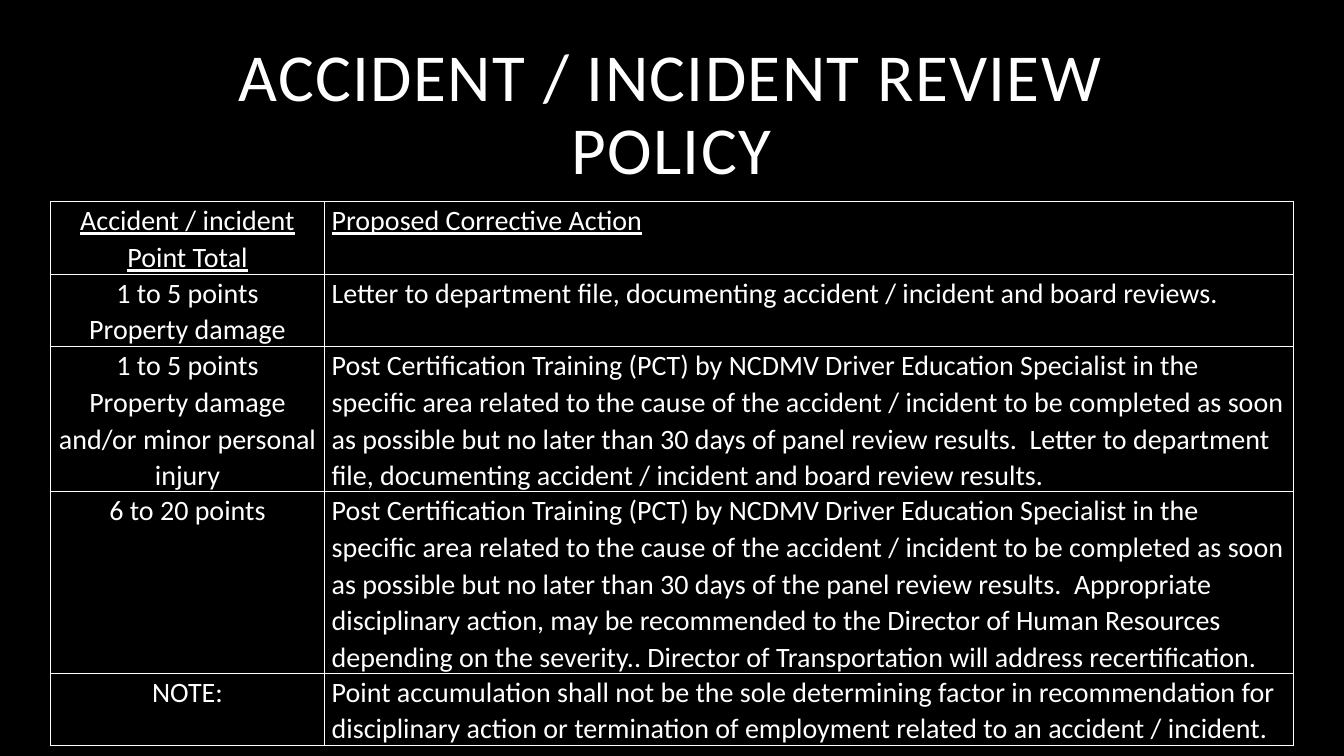
from lxml import etree
from pptx import Presentation
from pptx.dml.color import RGBColor
from pptx.enum.text import MSO_ANCHOR, PP_ALIGN
from pptx.oxml.ns import qn
from pptx.util import Inches, Pt

TITLE = "ACCIDENT / INCIDENT REVIEW POLICY"
TRAINING = (
    "Post Certification Training (PCT) by NCDMV Driver Education Specialist in the "
    "specific area related to the cause of the accident / incident to be completed "
    "as soon as possible but no later than 30 days of "
)
# Point total, corrective action, lines of text in the row
POLICY_ROWS = [
    ("Accident / incident Point Total", "Proposed Corrective Action", 2),
    ("1 to 5 points\nProperty damage",
     "Letter to department file, documenting accident / incident and board reviews.", 2),
    ("1 to 5 points\nProperty damage and/or minor personal injury",
     TRAINING + "panel review results.  Letter to department file, documenting "
     "accident / incident and board review results.", 4),
    ("6 to 20 points",
     TRAINING + "the panel review results.  Appropriate disciplinary action, may be "
     "recommended to the Director of Human Resources depending on the severity.. "
     "Director of Transportation will address recertification.", 5),
    ("NOTE:",
     "Point accumulation shall not be the sole determining factor in recommendation "
     "for disciplinary action or termination of employment related to an "
     "accident / incident.", 2),
]
COLUMN_WIDTHS = (2.72, 9.61)
COLUMN_ALIGNS = (PP_ALIGN.CENTER, PP_ALIGN.LEFT)
LINE_HEIGHT = 0.36
FONT = "Calibri"
BLACK = RGBColor(0x00, 0x00, 0x00)
WHITE = RGBColor(0xFF, 0xFF, 0xFF)


def style_text(frame, size, align, spacing, underline=False):
    for para in frame.paragraphs:
        para.alignment = align
        para.line_spacing = spacing
        for span in para.runs:
            font = span.font
            font.name, font.size, font.underline = FONT, Pt(size), underline
            font.color.rgb = WHITE


def add_borders(cell):
    """Draw a 1 pt white line on each side, ahead of the cell's fill."""
    properties = cell._tc.get_or_add_tcPr()
    for index, side in enumerate(("a:lnL", "a:lnR", "a:lnT", "a:lnB")):
        line = etree.Element(qn(side), w=str(Pt(1)))
        fill = etree.SubElement(line, qn("a:solidFill"))
        etree.SubElement(fill, qn("a:srgbClr"), val=str(WHITE))
        properties.insert(index, line)


def add_title(page):
    box = page.shapes.add_textbox(Inches(1.66), Inches(0.42), Inches(10), Inches(1.5))
    frame = box.text_frame
    frame.word_wrap = True
    frame.vertical_anchor = MSO_ANCHOR.BOTTOM
    frame.text = TITLE
    style_text(frame, 48, PP_ALIGN.CENTER, 0.9)
    frame.paragraphs[0].runs[0]._r.get_or_add_rPr().set("spc", "100")


def add_policy_table(page):
    height = LINE_HEIGHT * sum(lines for *_, lines in POLICY_ROWS)
    table = page.shapes.add_table(
        len(POLICY_ROWS), len(COLUMN_WIDTHS), Inches(0.5), Inches(2),
        Inches(sum(COLUMN_WIDTHS)), Inches(height)).table
    table.first_row = table.horz_banding = False
    for column, width in zip(table.columns, COLUMN_WIDTHS):
        column.width = Inches(width)
    for row_index, (*texts, lines) in enumerate(POLICY_ROWS):
        table.rows[row_index].height = Inches(LINE_HEIGHT * lines)
        for column_index, text in enumerate(texts):
            cell = table.cell(row_index, column_index)
            cell.margin_left = cell.margin_right = Inches(0.07)
            cell.margin_top = cell.margin_bottom = 0
            cell.fill.solid()
            cell.fill.fore_color.rgb = BLACK
            add_borders(cell)
            cell.text_frame.text = text
            style_text(cell.text_frame, 20, COLUMN_ALIGNS[column_index], 1.07,
                       underline=row_index == 0)


def main():
    deck = Presentation()
    deck.slide_width, deck.slide_height = Inches(13.33), Inches(7.5)
    page = deck.slides.add_slide(deck.slide_layouts[6])
    page.background.fill.solid()
    page.background.fill.fore_color.rgb = BLACK
    add_title(page)
    add_policy_table(page)
    deck.save("out.pptx")


if __name__ == "__main__":
    main()
